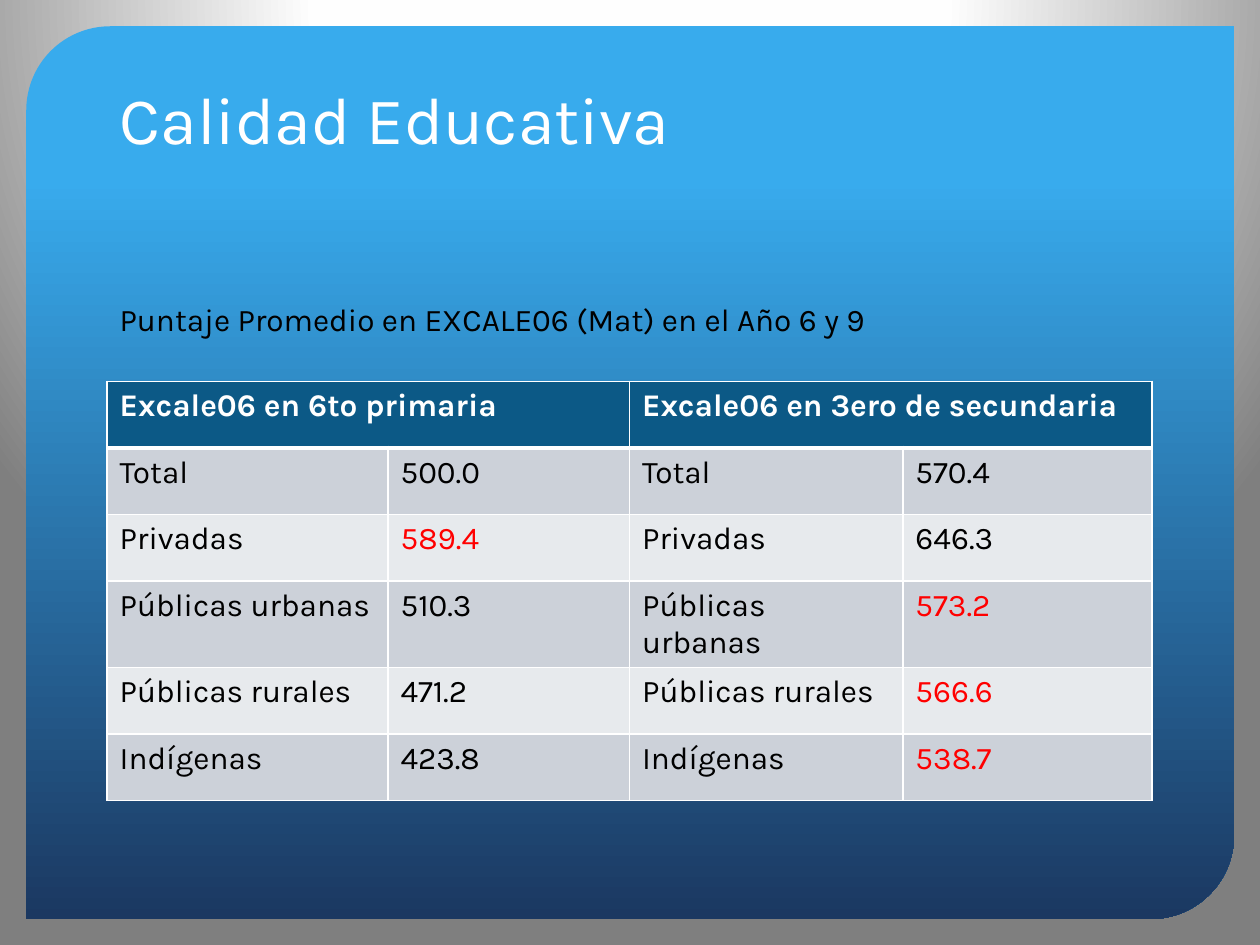
"""Build a slide comparing average test scores by type of school."""

from typing import NamedTuple

from pptx import Presentation
from pptx.dml.color import RGBColor
from pptx.enum.shapes import MSO_SHAPE
from pptx.enum.text import MSO_ANCHOR, PP_ALIGN
from pptx.oxml import parse_xml
from pptx.oxml.ns import nsdecls, qn
from pptx.util import Cm, Pt

PANEL_SHAPE = MSO_SHAPE.ROUND_2_DIAG_RECTANGLE
TOP, BOTTOM = MSO_ANCHOR.TOP, MSO_ANCHOR.BOTTOM
LEFT = PP_ALIGN.LEFT
FONT = "Karla"
COLORS = {
    "white": "FFFFFF", "black": "000000", "red": "FF0000",
    "near_white": "FEFEFE", "gray": "7F7F7F",
    "sky": "38ABED", "navy": "1B3861",
    "header": "0C5986", "dark_band": "CCD1D9", "light_band": "E7EAED",
}
MARGIN, CONTENT_WIDTH = 2.16, 21.06
COLUMN_WIDTHS = (5.66, 4.87, 5.51, 5.02)
ROW_HEIGHT = 1.34
CIRCLE = ('<a:path path="circle"><a:fillToRect l="50000" t="-80000" '
          'r="50000" b="180000"/></a:path>')
DOWNWARD = '<a:lin ang="5400000" scaled="0"/>'


class Score(NamedTuple):
    """One school type with its scores and whether each stands out."""

    school: str
    primary: str
    secondary: str
    primary_red: bool = False
    secondary_red: bool = False


HEADERS = ("Excale06 en 6to primaria", "Excale06 en 3ero de secundaria")
SCORES = (
    Score("Total", "500.0", "570.4"),
    Score("Privadas", "589.4", "646.3", primary_red=True),
    Score("Públicas urbanas", "510.3", "573.2", secondary_red=True),
    Score("Públicas rurales", "471.2", "566.6", secondary_red=True),
    Score("Indígenas", "423.8", "538.7", secondary_red=True),
)


def rgb(name: str) -> RGBColor:
    """Return a named colour."""
    return RGBColor.from_string(COLORS[name])


def set_gradient(owner, stops, direction: str) -> None:
    """Replace the gradient inside an element with the given stops."""
    old = next(owner.iter(qn("a:gradFill")))
    marks = "".join(
        f'<a:gs pos="{percent * 1000}"><a:srgbClr val="{COLORS[name]}"/></a:gs>'
        for percent, name in stops)
    new = parse_xml(f'<a:gradFill {nsdecls("a")} rotWithShape="1">'
                    f'<a:gsLst>{marks}</a:gsLst>{direction}</a:gradFill>')
    old.getparent().replace(old, new)


def write(frame, text: str, color: str, size: float = 18, bold: bool = False) -> None:
    """Write one left-aligned run into a text frame."""
    para = frame.paragraphs[0]
    para.alignment = LEFT
    span = para.add_run()
    span.text = text
    span.font.name = FONT
    span.font.size = Pt(size)
    span.font.bold = bold
    span.font.color.rgb = rgb(color)


def set_borders(cell, bottom: float = 1, top: float = 1) -> None:
    """Draw white lines on the four sides of a cell."""
    properties = cell._tc.get_or_add_tcPr()
    for index, (side, width) in enumerate(
            (("L", 1), ("R", 1), ("T", top), ("B", bottom))):
        properties.insert(index, parse_xml(
            f'<a:ln{side} {nsdecls("a")} w="{Pt(width)}"><a:solidFill>'
            f'<a:srgbClr val="{COLORS["white"]}"/></a:solidFill></a:ln{side}>'))


def draw_backdrop(page) -> None:
    """Draw the gray background and the blue panel behind everything."""
    page.background.fill.gradient()
    set_gradient(page.element, ((0, "white"), (40, "near_white"), (100, "gray")), CIRCLE)
    panel = page.shapes.add_shape(PANEL_SHAPE, Cm(0.53), Cm(0.53), Cm(24.35), Cm(18.0))
    panel.adjustments[0], panel.adjustments[1] = 0.094, 0
    panel.shadow.inherit = False
    panel.line.fill.background()
    panel.fill.gradient()
    set_gradient(panel.element, ((17, "sky"), (100, "navy")), DOWNWARD)
    page.shapes.element.insert(2, panel.element)


def draw_title(page) -> None:
    """Place and fill the title."""
    title = page.shapes.title
    title.left, title.top = Cm(MARGIN), Cm(1.07)
    title.width, title.height = Cm(CONTENT_WIDTH), Cm(2.24)
    title.text_frame.vertical_anchor = BOTTOM
    write(title.text_frame, "Calidad Educativa", "white", 38)


def draw_caption(page) -> None:
    """Add the caption above the table."""
    box = page.shapes.add_textbox(Cm(MARGIN), Cm(5.92), Cm(CONTENT_WIDTH), Cm(1.8))
    box.text_frame.word_wrap = True
    write(box.text_frame, "Puntaje Promedio en EXCALE06 (Mat) en el Año 6 y 9", "black")


def fill_cell(cell, text: str, fill: str, color: str, bold: bool = False) -> None:
    """Fill a table cell and write its text."""
    cell.fill.solid()
    cell.fill.fore_color.rgb = rgb(fill)
    cell.vertical_anchor = TOP
    write(cell.text_frame, text, color, bold=bold)


def draw_table(page) -> None:
    """Add the table of scores."""
    row_count = len(SCORES) + 1
    table = page.shapes.add_table(
        row_count, len(COLUMN_WIDTHS), Cm(MARGIN), Cm(7.69),
        Cm(CONTENT_WIDTH), Cm(ROW_HEIGHT * row_count)).table
    for column, width in zip(table.columns, COLUMN_WIDTHS):
        column.width = Cm(width)
    for row in table.rows:
        row.height = Cm(ROW_HEIGHT)
    for index, header in enumerate(HEADERS):
        cell = table.cell(0, index * 2)
        cell.merge(table.cell(0, index * 2 + 1))
        fill_cell(cell, header, "header", "white", bold=True)
    for row, score in enumerate(SCORES, start=1):
        band = "dark_band" if row % 2 else "light_band"
        entries = ((score.school, False), (score.primary, score.primary_red),
                   (score.school, False), (score.secondary, score.secondary_red))
        for column, (text, is_red) in enumerate(entries):
            fill_cell(table.cell(row, column), text, band, "red" if is_red else "black")
    for row in range(row_count):
        for column in range(len(COLUMN_WIDTHS)):
            set_borders(table.cell(row, column), bottom=1 if row else 3,
                        top=3 if row == 1 else 1)


def main() -> None:
    """Build and save the deck."""
    deck = Presentation()
    deck.slide_width, deck.slide_height = Cm(25.4), Cm(19.05)
    page = deck.slides.add_slide(deck.slide_layouts[5])
    draw_backdrop(page)
    draw_title(page)
    draw_table(page)
    draw_caption(page)
    deck.save("out.pptx")


if __name__ == "__main__":
    main()
